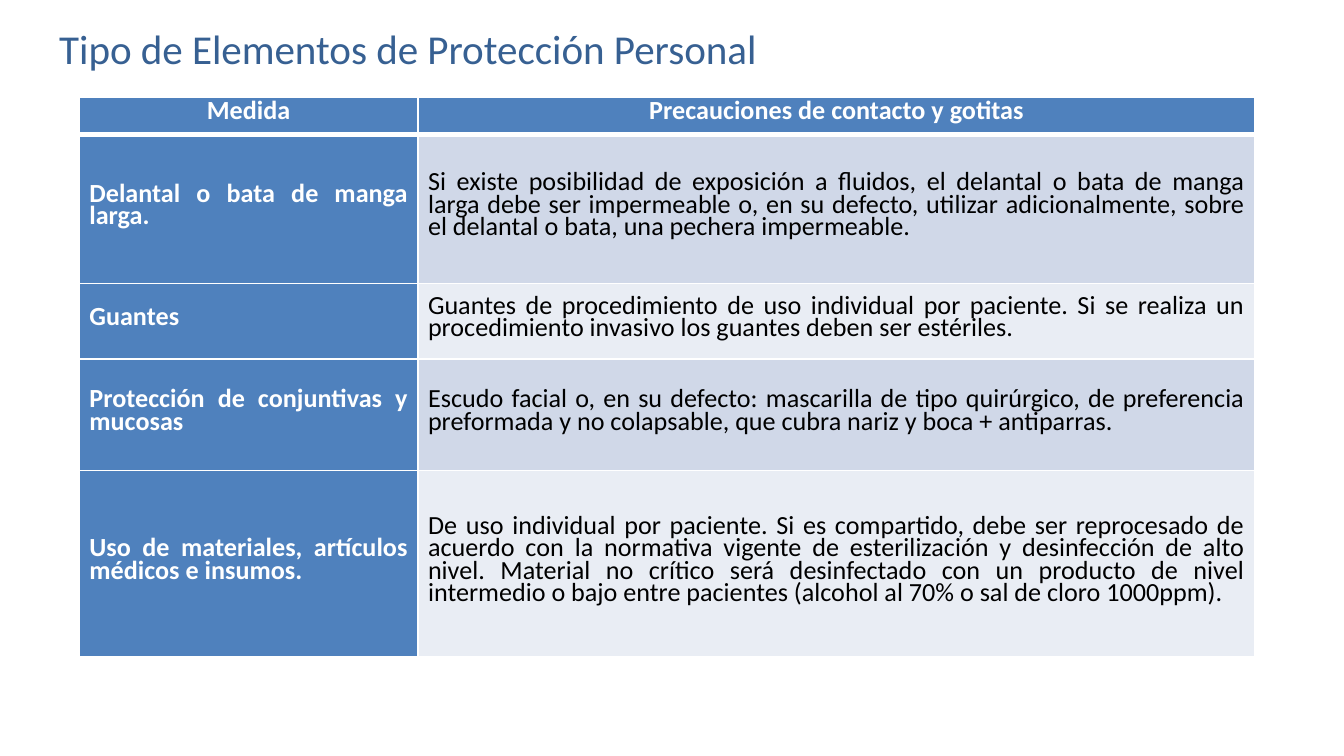
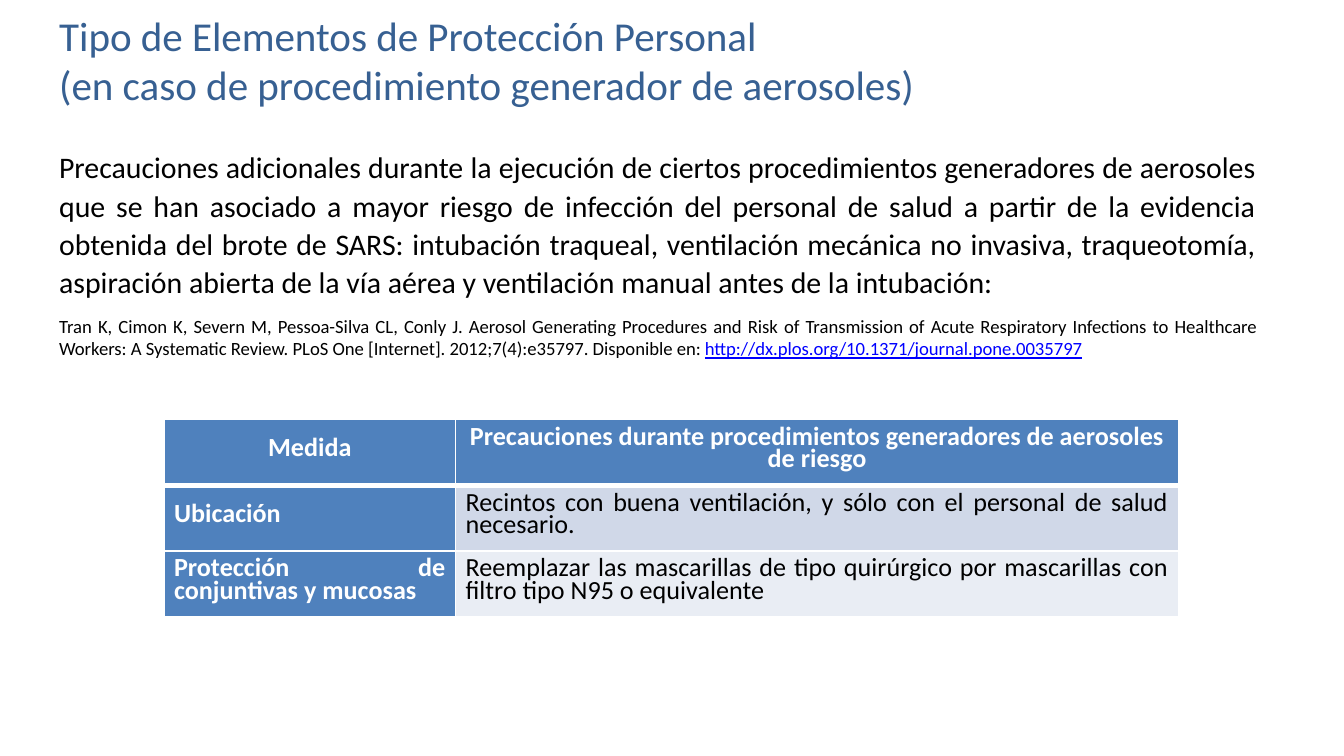
"""Build two slides on personal protective equipment, each with a table of measures."""
from lxml import etree
from pptx import Presentation
from pptx.dml.color import RGBColor
from pptx.enum.text import MSO_ANCHOR, MSO_AUTO_SIZE, PP_ALIGN
from pptx.oxml.ns import qn
from pptx.util import Inches, Pt

LEFT, CENTER, JUSTIFY = PP_ALIGN.LEFT, PP_ALIGN.CENTER, PP_ALIGN.JUSTIFY
TOP, MIDDLE = MSO_ANCHOR.TOP, MSO_ANCHOR.MIDDLE
NO_FIT = MSO_AUTO_SIZE.NONE

THEME = {
    "font": "Calibri",
    "title": "376092", "text": "000000", "link": "0000FF",
    "white": "FFFFFF", "header": "4F81BD", "bands": ("D0D8E8", "E9EDF4"),
    "title_size": 22, "body_size": 16, "cell_size": 14, "note_size": 10,
    "border": 1, "header_border": 3, "cell_margin": 5.4,
}

SLIDES = [
    {
        "layout": 5,
        "title": ["Tipo de Elementos de Protección Personal"],
        "title_top": 0.07,
        "body": [],
        "table_at": (0.59, 0.72),
        "cols": (2.52, 6.23),
        "rows": (0.28, 1.11, 0.56, 0.83, 1.39),
        "cells": [
            ("Medida", "Precauciones de contacto y gotitas"),
            ("Delantal o bata de manga larga.",
             "Si existe posibilidad de exposición a fluidos, el delantal o bata de manga larga "
             "debe ser impermeable o, en su defecto, utilizar adicionalmente, sobre el delantal "
             "o bata, una pechera impermeable."),
            ("Guantes",
             "Guantes de procedimiento de uso individual por paciente. Si se realiza un "
             "procedimiento invasivo los guantes deben ser estériles."),
            ("Protección de conjuntivas y mucosas",
             "Escudo facial o, en su defecto: mascarilla de tipo quirúrgico, de preferencia "
             "preformada y no colapsable, que cubra nariz y boca + antiparras."),
            ("Uso de materiales, artículos médicos e insumos.",
             "De uso individual por paciente. Si es compartido, debe ser reprocesado de acuerdo "
             "con la normativa vigente de esterilización y desinfección de alto nivel. Material "
             "no crítico será desinfectado con un producto de nivel intermedio o bajo entre "
             "pacientes (alcohol al 70% o sal de cloro 1000ppm)."),
        ],
    },
    {
        "layout": 1,
        "title": ["Tipo de Elementos de Protección Personal",
                  "(en caso de procedimiento generador de aerosoles)"],
        "title_top": 0.16,
        "body": [
            ({"line_spacing": 1.07, "space_after": Pt(8)}, "body_size", [
                ("Precauciones adicionales durante la ejecución de ciertos procedimientos "
                 "generadores de aerosoles que se han asociado a mayor riesgo de infección del "
                 "personal de salud a partir de la evidencia obtenida del brote de SARS: "
                 "intubación traqueal, ventilación mecánica no invasiva, traqueotomía, "
                 "aspiración abierta de la vía aérea y ventilación manual antes de la "
                 "intubación:", "text")]),
            ({"line_spacing": 1.0, "space_after": Pt(0)}, "note_size", [
                ("Tran K, Cimon K, Severn M, Pessoa-Silva CL, Conly J. Aerosol Generating "
                 "Procedures and Risk of Transmission of Acute Respiratory Infections to "
                 "Healthcare Workers: A Systematic Review. PLoS One [Internet]. "
                 "2012;7(4):e35797. Disponible en: ", "text"),
                ("http://dx.plos.org/10.1371/journal.pone.0035797", "link")]),
        ],
        "table_at": (1.22, 3.12),
        "cols": (2.17, 5.38),
        "rows": (0.49, 0.49, 0.49),
        "cells": [
            ("Medida", "Precauciones durante procedimientos generadores de aerosoles de riesgo"),
            ("Ubicación",
             "Recintos con buena ventilación, y sólo con el personal de salud necesario."),
            ("Protección de conjuntivas y mucosas",
             "Reemplazar las mascarillas de tipo quirúrgico por mascarillas con filtro tipo N95 "
             "o equivalente"),
        ],
    },
]


def add_text(p, text, size, color, **font):
    """Add a run in the theme font to a paragraph."""
    r = p.add_run()
    r.text = text
    r.font.color.rgb = RGBColor.from_string(color)
    for key, value in {"name": THEME["font"], "size": Pt(size), **font}.items():
        setattr(r.font, key, value)


def place(sp, box, anchor):
    """Move a placeholder and return its text frame."""
    sp.left, sp.top, sp.width, sp.height = map(Inches, box)
    tf = sp.text_frame
    for key, value in {"word_wrap": True, "auto_size": NO_FIT, "vertical_anchor": anchor}.items():
        setattr(tf, key, value)
    return tf


prs = Presentation()
prs.slide_width, prs.slide_height = Inches(10), Inches(10 * 9 / 16)

for data in SLIDES:
    s = prs.slides.add_slide(prs.slide_layouts[data["layout"]])

    tf = place(s.shapes.title, (0.34, data["title_top"], 9.56, 0.57), MIDDLE)
    for i, line in enumerate(data["title"]):
        p = tf.add_paragraph() if i else tf.paragraphs[0]
        p.alignment = LEFT
        add_text(p, line, THEME["title_size"], THEME["title"])

    for i, (spacing, size, runs) in enumerate(data["body"]):
        if i == 0:
            tf = place(s.placeholders[1], (0.34, 1.04, 9.11, 1.7), TOP)
        p = tf.add_paragraph() if i else tf.paragraphs[0]
        pPr = p._p.get_or_add_pPr()
        pPr.set("marL", "0")
        pPr.set("indent", "0")
        etree.SubElement(pPr, qn("a:buNone"))
        for key, value in {"alignment": JUSTIFY, "space_before": Pt(0), **spacing}.items():
            setattr(p, key, value)
        for text, color in runs:
            add_text(p, text, THEME[size], THEME[color], underline=color == "link")

    cols, rows = data["cols"], data["rows"]
    x, y = data["table_at"]
    table = s.shapes.add_table(len(rows), len(cols), Inches(x), Inches(y),
                               Inches(sum(cols)), Inches(sum(rows))).table
    for col, width in zip(table.columns, cols):
        col.width = Inches(width)
    margin = Pt(THEME["cell_margin"])
    for i, (row, height) in enumerate(zip(table.rows, rows)):
        row.height = Inches(height)
        for j, cell in enumerate(row.cells):
            head = i == 0 or j == 0
            tcPr = cell._tc.get_or_add_tcPr()
            for side in "LRTB":
                thick = (i, side) in ((0, "B"), (1, "T"))
                width = THEME["header_border" if thick else "border"]
                ln = etree.SubElement(tcPr, qn(f"a:ln{side}"), w=str(Pt(width)))
                fill = etree.SubElement(ln, qn("a:solidFill"))
                etree.SubElement(fill, qn("a:srgbClr"), val=THEME["white"])
            cell.fill.solid()
            cell.fill.fore_color.rgb = RGBColor.from_string(
                THEME["header"] if head else THEME["bands"][(i - 1) % 2])
            for key, value in {"vertical_anchor": MIDDLE,
                               "margin_left": margin, "margin_right": margin,
                               "margin_top": 0, "margin_bottom": 0}.items():
                setattr(cell, key, value)
            p = cell.text_frame.paragraphs[0]
            for key, value in {"alignment": JUSTIFY if i else CENTER,
                               "line_spacing": Pt(12), "space_after": Pt(10)}.items():
                setattr(p, key, value)
            add_text(p, data["cells"][i][j], THEME["cell_size"],
                     THEME["white" if head else "text"], bold=head)

prs.save("out.pptx")
